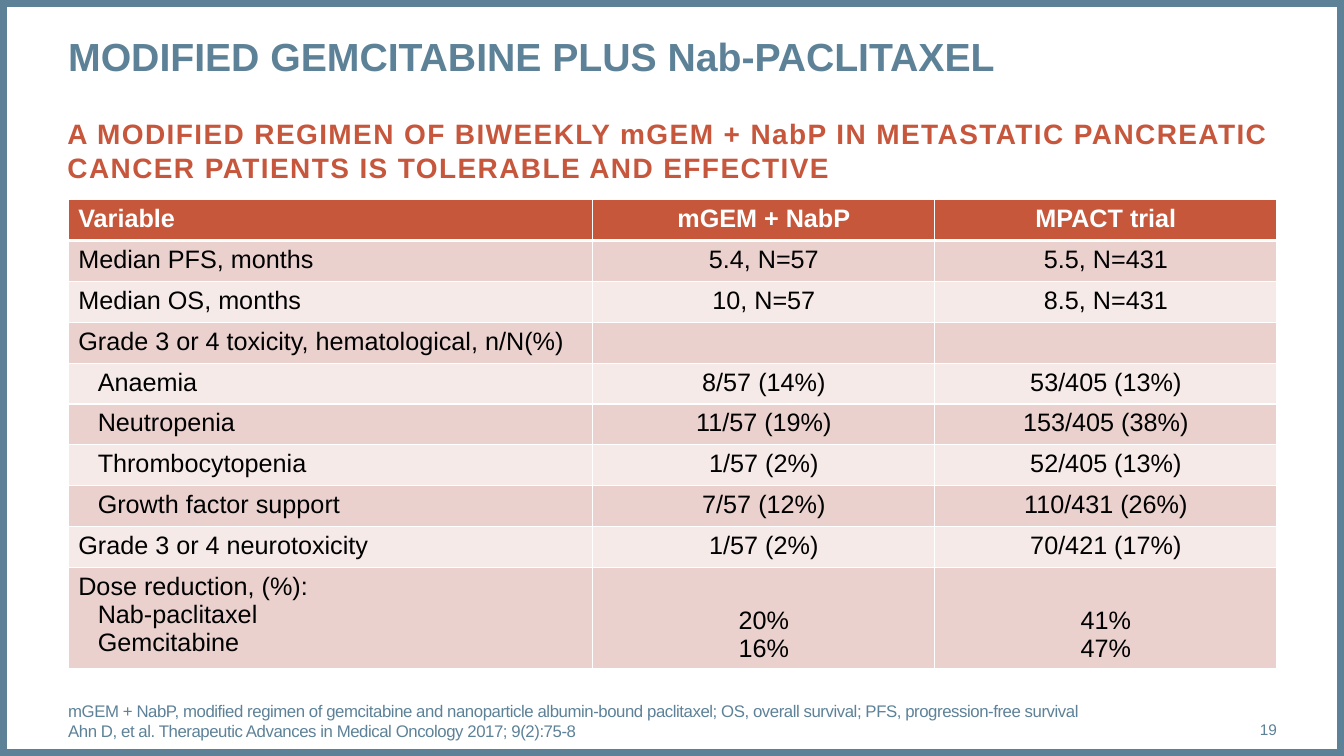
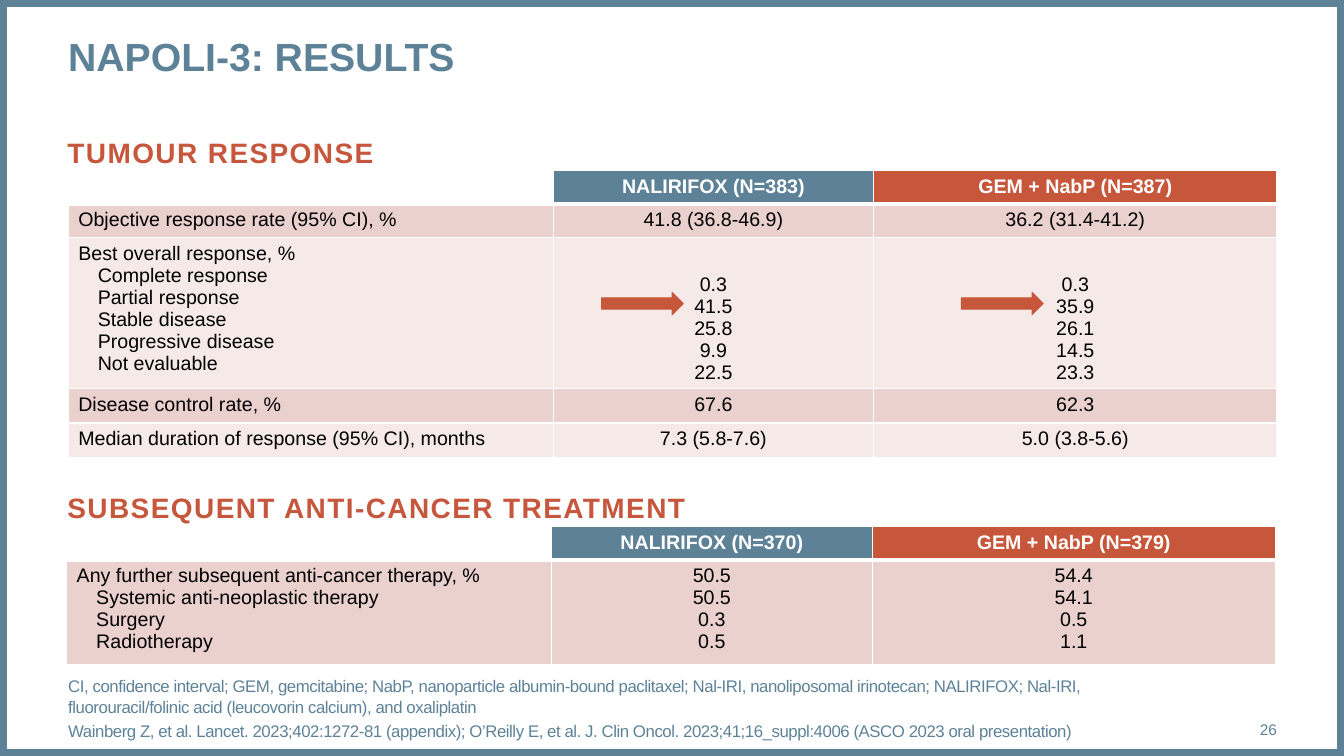
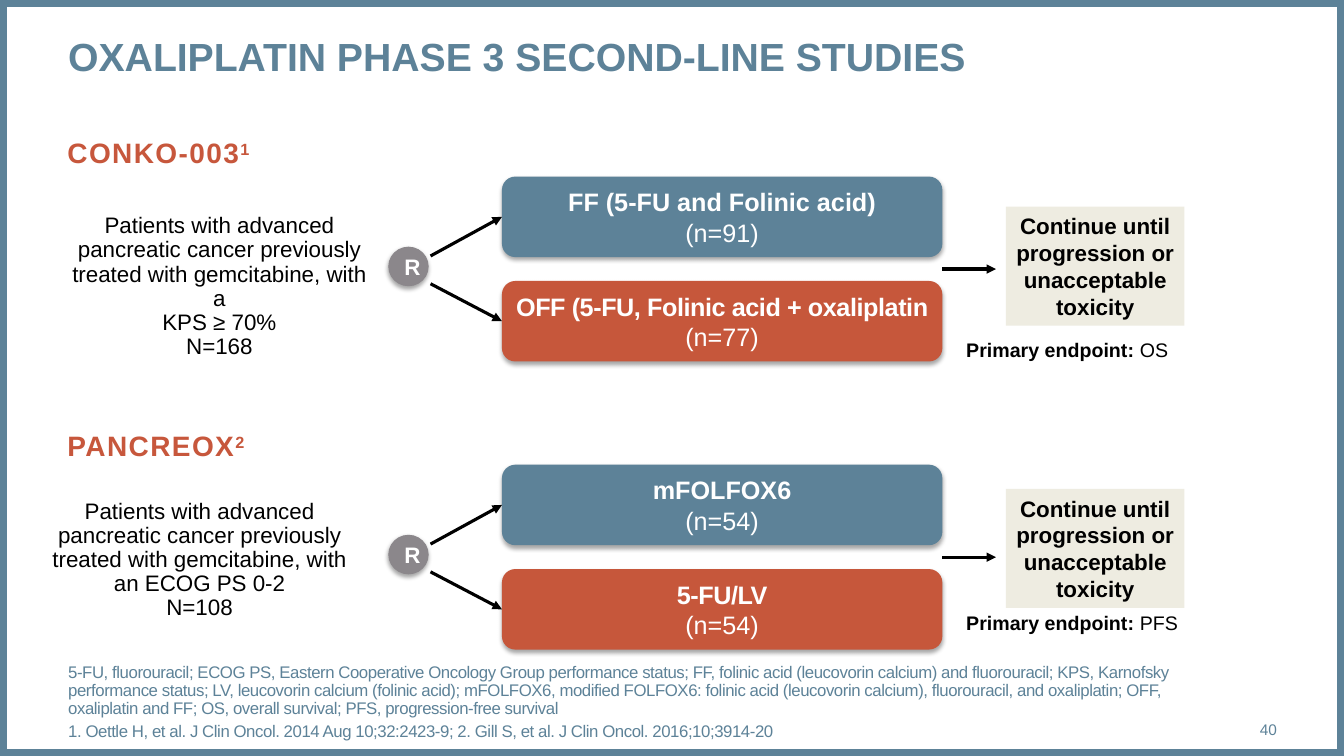
from dataclasses import dataclass, replace
from typing import Any, NamedTuple

import lxml.etree
import pptx
import pptx.dml.color
import pptx.enum.shapes
import pptx.enum.text
import pptx.oxml.ns
import pptx.util

Cm = pptx.util.Cm
Pt = pptx.util.Pt
qn = pptx.oxml.ns.qn
Align = pptx.enum.text.PP_ALIGN
Anchor = pptx.enum.text.MSO_ANCHOR
Preset = pptx.enum.shapes.MSO_SHAPE

# Shared look
COLORS = {
    "blue": "5D8298", "red": "C6573B", "heading": "C7573C", "white": "FFFFFF",
    "black": "000000", "band_dark": "EAD1CE", "band_light": "F5EAE8",
    "sand": "EEECE1", "gray": "8B878B",
}
FONT = "Arial"
SLIDE_WIDTH, SLIDE_HEIGHT = 33.87, 19.05
LEFT, CONTENT_WIDTH = 1.72, 30.46
SUB_INDENT = 0.49


@dataclass(frozen=True)
class TextStyle:
    size: float
    color: str = "black"
    bold: bool = False
    spacing: float = 0
    baseline: int = 0


class Area(NamedTuple):
    left: float
    top: float
    width: float
    height: float


class Span(NamedTuple):
    text: str
    style: TextStyle


class Para(NamedTuple):
    spans: list[Span]
    format: dict[str, Any] = {}


TITLE = TextStyle(28, "blue", True)
HEADING = TextStyle(20, "heading", True, 1)
SUPERSCRIPT = replace(HEADING, baseline=30)
FOOTNOTE = TextStyle(12, "blue", spacing=-0.3)
NUMBER = TextStyle(11, "blue")
CENTER = {"alignment": Align.CENTER}


def rgb(name: str) -> pptx.dml.color.RGBColor:
    return pptx.dml.color.RGBColor.from_string(COLORS[name])


def place(area: Area) -> list[int]:
    return [Cm(value) for value in area]


def set_all(target: Any, values: dict[str, Any]) -> None:
    for name, value in values.items():
        setattr(target, name, value)


def write(frame: Any, paras: list[Para]) -> None:
    for index, item in enumerate(paras):
        para = frame.paragraphs[0] if index == 0 else frame.add_paragraph()
        set_all(para, item.format)
        for text, style in item.spans:
            span = para.add_run()
            span.text = text
            set_all(span.font, {"name": FONT, "size": Pt(style.size), "bold": style.bold})
            span.font.color.rgb = rgb(style.color)
            if style.spacing:
                span.font._rPr.set("spc", str(round(style.spacing * 100)))
            if style.baseline:
                span.font._rPr.set("baseline", str(style.baseline * 1000))


def add_text(page: Any, area: Area, paras: list[Para], anchor: Any = Anchor.TOP,
             inset: bool = False) -> None:
    frame = page.shapes.add_textbox(*place(area)).text_frame
    set_all(frame, {"word_wrap": True, "vertical_anchor": anchor})
    if not inset:
        set_all(frame, dict.fromkeys(
            ("margin_left", "margin_top", "margin_right", "margin_bottom"), 0))
    write(frame, paras)


def add_preset(page: Any, preset: Any, area: Area, fill: str | None, line: str | None = None,
               line_width: float = 0.75, shadow: bool = False) -> Any:
    shape = page.shapes.add_shape(preset, *place(area))
    shape.shadow.inherit = False
    if fill:
        shape.fill.solid()
        shape.fill.fore_color.rgb = rgb(fill)
    else:
        shape.fill.background()
    if line:
        shape.line.color.rgb = rgb(line)
        shape.line.width = Pt(line_width)
    else:
        shape.line.fill.background()
    if shadow:
        effects = shape._element.spPr.find(qn("a:effectLst"))
        outer = lxml.etree.SubElement(
            effects, qn("a:outerShdw"), blurRad=str(Pt(3.1)), dist=str(Pt(1.8)),
            dir="5400000", rotWithShape="0")
        tint = lxml.etree.SubElement(outer, qn("a:srgbClr"), val=COLORS["black"])
        lxml.etree.SubElement(tint, qn("a:alpha"), val="35000")
    shape.text_frame.vertical_anchor = Anchor.MIDDLE
    return shape


def add_arrow(page: Any, start: tuple[float, float], end: tuple[float, float],
              target: Any = None) -> None:
    arrow = page.shapes.add_connector(
        pptx.enum.shapes.MSO_CONNECTOR.STRAIGHT, *[Cm(value) for value in start + end])
    if target is not None:
        arrow.end_connect(target, 1)
    arrow.line.color.rgb = rgb("black")
    arrow.line.width = Pt(2.25)
    lxml.etree.SubElement(arrow.line._get_or_add_ln(), qn("a:tailEnd"), type="triangle")
    lxml.etree.SubElement(arrow._element.spPr, qn("a:effectLst"))


def add_heading(page: Any, top: float, text: str, mark: str = "",
                width: float = CONTENT_WIDTH) -> None:
    spans = [Span(text, HEADING)] + ([Span(mark, SUPERSCRIPT)] if mark else [])
    add_text(page, Area(1.7, top, width, 0.92), [Para(spans)])


def add_page(deck: Any, title: str, number: str, notes: list[str], anchor: Any,
             gap: float = 0, line_spacing: float = 1.0) -> Any:
    """Add a framed page with its title, footnotes and page number."""
    page = deck.slides.add_slide(deck.slide_layouts[6])
    add_preset(page, Preset.RECTANGLE, Area(0, 0, SLIDE_WIDTH, SLIDE_HEIGHT), None, "blue", 10)
    add_text(page, Area(LEFT, 0.81, CONTENT_WIDTH, 2.3), [Para([Span(title, TITLE)])])
    add_text(page, Area(LEFT, 17.65, 28.27, 1.02), [
        Para([Span(note, FOOTNOTE)],
             {"line_spacing": line_spacing, "space_before": Pt(gap if index else 0)})
        for index, note in enumerate(notes)], anchor)
    add_text(page, Area(30, 17.86, 2.18, 1.02),
             [Para([Span(number, NUMBER)], {"alignment": Align.RIGHT})], Anchor.MIDDLE)
    return page


# Tables
class Row(NamedTuple):
    labels: list[str]
    first: list[str]
    second: list[str]
    height: float
    indent_from: int = 1


def set_borders(cell: Any, row: int) -> None:
    properties = cell._tc.get_or_add_tcPr()
    widths = {"L": 1, "R": 1, "T": 3 if row == 1 else 1, "B": 3 if row == 0 else 1}
    for side, width in widths.items():
        line = lxml.etree.SubElement(properties, qn(f"a:ln{side}"), w=str(Pt(width)))
        fill = lxml.etree.SubElement(line, qn("a:solidFill"))
        lxml.etree.SubElement(fill, qn("a:srgbClr"), val=COLORS["white"])


def add_grid(page: Any, left: float, top: float, columns: list[float], rows: list[Row],
             header_fills: list[str | None], size: float) -> None:
    area = Area(left, top, sum(columns), sum(row.height for row in rows))
    table = page.shapes.add_table(len(rows), len(columns), *place(area)).table
    set_all(table, {"first_row": False, "horz_banding": False})
    for column, width in zip(table.columns, columns):
        column.width = Cm(width)
    for row_index, row in enumerate(rows):
        table.rows[row_index].height = Cm(row.height)
        header = row_index == 0
        style = TextStyle(size, "white" if header else "black", header)
        band = "band_dark" if row_index % 2 else "band_light"
        for column_index, lines in enumerate((row.labels, row.first, row.second)):
            cell = table.cell(row_index, column_index)
            set_borders(cell, row_index)
            fill = header_fills[column_index] if header else band
            if fill:
                cell.fill.solid()
                cell.fill.fore_color.rgb = rgb(fill)
            else:
                cell.fill.background()
            # Values line up with the last labels of their row
            cell.vertical_anchor = Anchor.BOTTOM if len(lines) < len(row.labels) else Anchor.TOP
            write(cell.text_frame, [
                Para([Span(line, style)], CENTER if column_index else {}) for line in lines])
            paras = cell.text_frame.paragraphs
            if not lines:
                lxml.etree.SubElement(paras[0]._p, qn("a:endParaRPr"), sz=str(size * 100))
            elif column_index == 0:
                for para in paras[row.indent_from:]:
                    para._p.get_or_add_pPr().set("marL", str(Cm(SUB_INDENT)))


# Modified regimen
def build_regimen(deck: Any) -> None:
    page = add_page(deck, "MODIFIED GEMCITABINE PLUS Nab-PACLITAXEL", "19", [
        "mGEM + NabP, modified regimen of gemcitabine and nanoparticle albumin-bound paclitaxel; "
        "OS, overall survival; PFS, progression-free survival",
        "Ahn D, et al. Therapeutic Advances in Medical Oncology 2017; 9(2):75-8"], Anchor.MIDDLE)
    add_heading(page, 2.94, "A MODIFIED REGIMEN OF BIWEEKLY mGEM + NabP IN METASTATIC PANCREATIC "
                            "CANCER PATIENTS IS TOLERABLE AND EFFECTIVE")
    single_rows = [
        ("Variable", "mGEM + NabP", "MPACT trial", 1),
        ("Median PFS, months", "5.4, N=57", "5.5, N=431", 1),
        ("Median OS, months", "10, N=57", "8.5, N=431", 1),
        ("Grade 3 or 4 toxicity, hematological, n/N(%)", "", "", 1),
        ("Anaemia", "8/57 (14%)", "53/405 (13%)", 0),
        ("Neutropenia", "11/57 (19%)", "153/405 (38%)", 0),
        ("Thrombocytopenia", "1/57 (2%)", "52/405 (13%)", 0),
        ("Growth factor support", "7/57 (12%)", "110/431 (26%)", 0),
        ("Grade 3 or 4 neurotoxicity", "1/57 (2%)", "70/421 (17%)", 1),
    ]
    rows = [Row([label], [first] if first else [], [second] if second else [], 1.03, indent_from)
            for label, first, second, indent_from in single_rows]
    rows.append(Row(["Dose reduction, (%):", "Nab-paclitaxel", "Gemcitabine"],
                    ["20%", "16%"], ["41%", "47%"], 2.39))
    add_grid(page, LEFT, 5.03, [13.22, 8.62, 8.62], rows, ["red"] * 3, 18)


# Response results
def build_results(deck: Any) -> None:
    page = add_page(deck, "NAPOLI-3: RESULTS", "26", [
        "CI, confidence interval; GEM, gemcitabine; NabP, nanoparticle albumin-bound paclitaxel; "
        "Nal-IRI, nanoliposomal irinotecan; NALIRIFOX; Nal-IRI, fluorouracil/folinic acid "
        "(leucovorin calcium), and oxaliplatin",
        "Wainberg Z, et al. Lancet. 2023;402:1272-81 (appendix); O’Reilly E, et al. J. Clin Oncol. "
        "2023;41;16_suppl:4006 (ASCO 2023 oral presentation)"], Anchor.BOTTOM, 3)
    columns = [12.22, 8.08, 10.16]
    fills = [None, "blue", "red"]
    add_heading(page, 3.42, "TUMOUR RESPONSE")
    add_grid(page, LEFT, 4.29, columns, [
        Row([], ["NALIRIFOX (N=383)"], ["GEM + NabP (N=387)"], 0.81),
        Row(["Objective response rate (95% CI), %"], ["41.8 (36.8-46.9)"],
            ["36.2 (31.4-41.2)"], 0.81),
        Row(["Best overall response, %", "Complete response", "Partial response",
             "Stable disease", "Progressive disease", "Not evaluable"],
            ["0.3", "41.5", "25.8", "9.9", "22.5"],
            ["0.3", "35.9", "26.1", "14.5", "23.3"], 3.58),
        Row(["Disease control rate, %"], ["67.6"], ["62.3"], 0.86),
        Row(["Median duration of response (95% CI), months"], ["7.3 (5.8-7.6)"],
            ["5.0 (3.8-5.6)"], 0.86),
    ], fills, 14)
    for left in (15.16, 24.23):
        add_preset(page, Preset.RIGHT_ARROW, Area(left, 7.37, 2.06, 0.56), "red", "red")
    add_heading(page, 12.37, "SUBSEQUENT ANTI-CANCER TREATMENT")
    add_grid(page, 1.68, 13.26, columns, [
        Row([], ["NALIRIFOX (N=370)"], ["GEM + NabP (N=379)"], 0.81),
        Row(["Any further subsequent anti-cancer therapy, %", "Systemic anti-neoplastic therapy",
             "Surgery", "Radiotherapy"],
            ["50.5", "50.5", "0.3", "0.5"], ["54.4", "54.1", "0.5", "1.1"], 2.47),
    ], fills, 14)


# Trial designs
@dataclass(frozen=True)
class Arm:
    name: str
    count: str
    fill: str
    spacing: float = 0


@dataclass(frozen=True)
class Trial:
    name: str
    mark: str
    endpoint: str
    patients: list[str]
    arms: list[Arm]
    top: float
    heading_top: float
    stop_top: float
    endpoint_top: float
    patients_area: Area


TRIALS = [
    Trial("CONKO-003", "1", "OS",
          ["Patients with advanced pancreatic cancer previously treated with gemcitabine, with a",
           "KPS ≥ 70%", "N=168"],
          [Arm("FF (5-FU and Folinic acid)", "(n=91)", "blue"),
           Arm("OFF (5-FU, Folinic acid + oxaliplatin", "(n=77)", "red", -0.3)],
          4.45, 3.42, 5.21, 8.51, Area(1.38, 5.28, 8.3, 3.96)),
    Trial("PANCREOX", "2", "PFS",
          ["Patients with advanced pancreatic cancer previously treated with gemcitabine, "
           "with an ECOG PS 0-2", "N=108"],
          [Arm("mFOLFOX6", "(n=54)", "blue"), Arm("5-FU/LV", "(n=54)", "red", -0.3)],
          11.71, 10.8, 12.32, 15.39, Area(0.94, 12.47, 8.18, 3.33)),
]


def add_trial(page: Any, trial: Trial) -> None:
    add_heading(page, trial.heading_top, trial.name, trial.mark, 6.05)
    add_text(page, trial.patients_area, [
        Para([Span(line, TextStyle(16))], {**CENTER, "line_spacing": 0.9})
        for line in trial.patients], inset=True)
    # Randomisation
    circle = add_preset(page, Preset.OVAL, Area(9.8, trial.top + 1.78, 0.99, 0.97),
                        "gray", "gray", shadow=True)
    write(circle.text_frame, [Para([Span("R", TextStyle(16, "white", True))], CENTER)])
    # Treatment arms
    for index, arm in enumerate(trial.arms):
        top = trial.top + index * 2.63
        box = add_preset(page, Preset.ROUNDED_RECTANGLE, Area(12.65, top, 11.1, 2.03),
                         arm.fill, shadow=True)
        write(box.text_frame, [
            Para([Span(arm.name, TextStyle(18, "white", True, arm.spacing))], CENTER),
            Para([Span(arm.count, TextStyle(18, "white"))], CENTER)])
        add_arrow(page, (10.85, trial.top + 2 + index * 0.7), (12.65, top + 1.02), box)
    # Treatment end and endpoint
    middle = trial.top + 2.33
    add_arrow(page, (23.75, middle), (25.1, middle))
    stop = add_preset(page, Preset.RECTANGLE, Area(25.35, trial.stop_top, 4.5, 3), "sand")
    set_all(stop.text_frame, {"margin_left": Cm(0.2), "margin_right": Cm(0.2)})
    write(stop.text_frame, [Para([Span("Continue until progression or unacceptable toxicity",
                                       TextStyle(16, bold=True))], CENTER)])
    add_text(page, Area(24.1, trial.endpoint_top, 7, 0.74), [
        Para([Span("Primary endpoint: ", TextStyle(14, bold=True)),
              Span(trial.endpoint, TextStyle(14))], {"line_spacing": 0.8})], inset=True)


def build_trials(deck: Any) -> None:
    page = add_page(deck, "OXALIPLATIN PHASE 3 SECOND-LINE STUDIES", "40", [
        "5-FU, fluorouracil; ECOG PS, Eastern Cooperative Oncology Group performance status; "
        "FF, folinic acid (leucovorin calcium) and fluorouracil; KPS, Karnofsky performance "
        "status; LV, leucovorin calcium (folinic acid); mFOLFOX6, modified FOLFOX6: folinic acid "
        "(leucovorin calcium), fluorouracil, and oxaliplatin; OFF, oxaliplatin and FF; "
        "OS, overall survival; PFS, progression-free survival",
        "1. Oettle H, et al. J Clin Oncol. 2014 Aug 10;32:2423-9; "
        "2. Gill S, et al. J Clin Oncol. 2016;10;3914-20"], Anchor.BOTTOM, 3, 0.9)
    for trial in TRIALS:
        add_trial(page, trial)


def main() -> None:
    deck = pptx.Presentation()
    set_all(deck, {"slide_width": Cm(SLIDE_WIDTH), "slide_height": Cm(SLIDE_HEIGHT)})
    build_regimen(deck)
    build_results(deck)
    build_trials(deck)
    deck.save("out.pptx")


if __name__ == "__main__":
    main()
